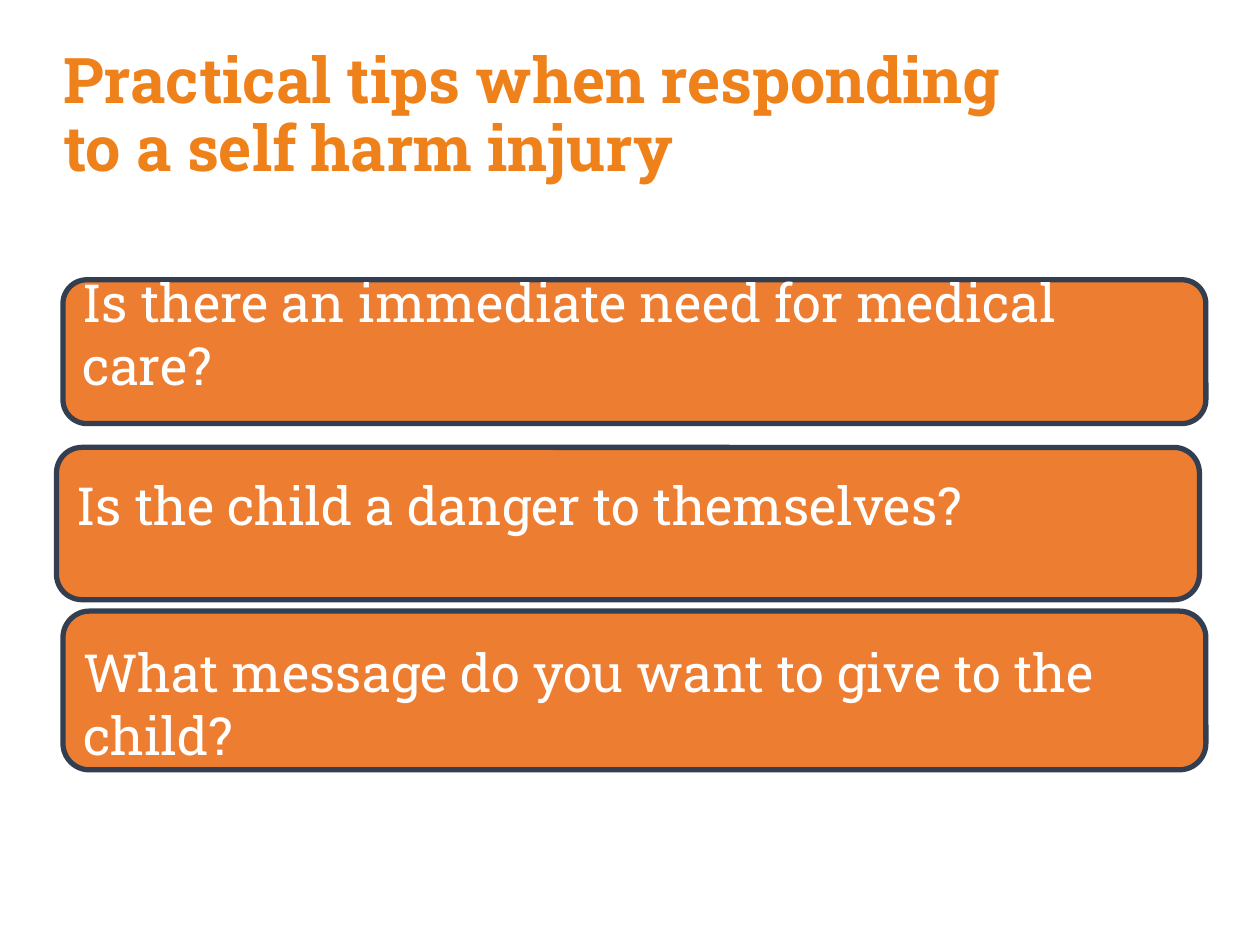
import dataclasses

import pptx
import pptx.dml.color
import pptx.enum.shapes
import pptx.enum.text
import pptx.util

Cm = pptx.util.Cm
Anchor = pptx.enum.text.MSO_ANCHOR


@dataclasses.dataclass(frozen=True)
class Theme:
    """Colours, font and sizes of the slide."""
    font: str = "Roboto Slab"
    title: str = "EF811B"
    box: str = "ED7D31"
    outline: str = "333F50"
    text: str = "FFFFFF"
    title_size: int = 36
    box_size: int = 30
    outline_width: int = 3


THEME = Theme()


def rgb(value):
    """Return a colour from its hex value."""
    return pptx.dml.color.RGBColor.from_string(value)


def write(sp, text, size, color, bold=False, anchor=Anchor.MIDDLE,
          insets=(0.25, 0.13, 0.25, 0.13), line_spacing=1.0):
    """Put formatted, left-aligned text in a shape."""
    tf = sp.text_frame
    tf.word_wrap = True
    tf.auto_size = pptx.enum.text.MSO_AUTO_SIZE.NONE
    tf.vertical_anchor = anchor
    tf.margin_left, tf.margin_top, tf.margin_right, tf.margin_bottom = map(Cm, insets)
    p = tf.paragraphs[0]
    p.alignment = pptx.enum.text.PP_ALIGN.LEFT
    p.line_spacing = line_spacing
    r = p.add_run()
    r.text = text
    r.font.name = THEME.font
    r.font.size = pptx.util.Pt(size)
    r.font.bold = bold
    r.font.color.rgb = rgb(color)


def add_title(s, text):
    """Place and fill the title placeholder."""
    sp = s.shapes.title
    sp.left, sp.top, sp.width, sp.height = Cm(1.27), Cm(0.99), Cm(20.37), Cm(4.6)
    write(sp, text, THEME.title_size, THEME.title, bold=True, anchor=Anchor.TOP,
          insets=(0, 0, 0, 0), line_spacing=0.9)


def add_question(s, text, left, top, height, inset_top, inset_bottom):
    """Add a rounded box holding one question."""
    sp = s.shapes.add_shape(pptx.enum.shapes.MSO_SHAPE.ROUNDED_RECTANGLE,
                            Cm(left), Cm(top), Cm(23.04), Cm(height))
    sp.shadow.inherit = False
    sp.fill.solid()
    sp.fill.fore_color.rgb = rgb(THEME.box)
    sp.line.color.rgb = rgb(THEME.outline)
    sp.line.width = pptx.util.Pt(THEME.outline_width)
    write(sp, text, THEME.box_size, THEME.text,
          insets=(0.25, inset_top, 0.25, inset_bottom))


def main():
    """Build and save the slide."""
    prs = pptx.Presentation()
    prs.slide_width, prs.slide_height = Cm(25.4), Cm(19.05)
    s = prs.slides.add_slide(prs.slide_layouts[5])
    questions = [
        ("Is there an immediate need for medical care?", 1.27, 5.64, 2.9, 0.13, 0.89),
        ("Is the child a danger to themselves?", 1.14, 9.02, 3.07, 0.13, 0.89),
        ("What message do you want to give to the child?", 1.27, 12.32, 3.2, 0.64, 0.13),
    ]
    for question in questions:
        add_question(s, *question)
    add_title(s, "Practical tips when responding to a self harm injury")
    prs.save("out.pptx")


if __name__ == "__main__":
    main()
